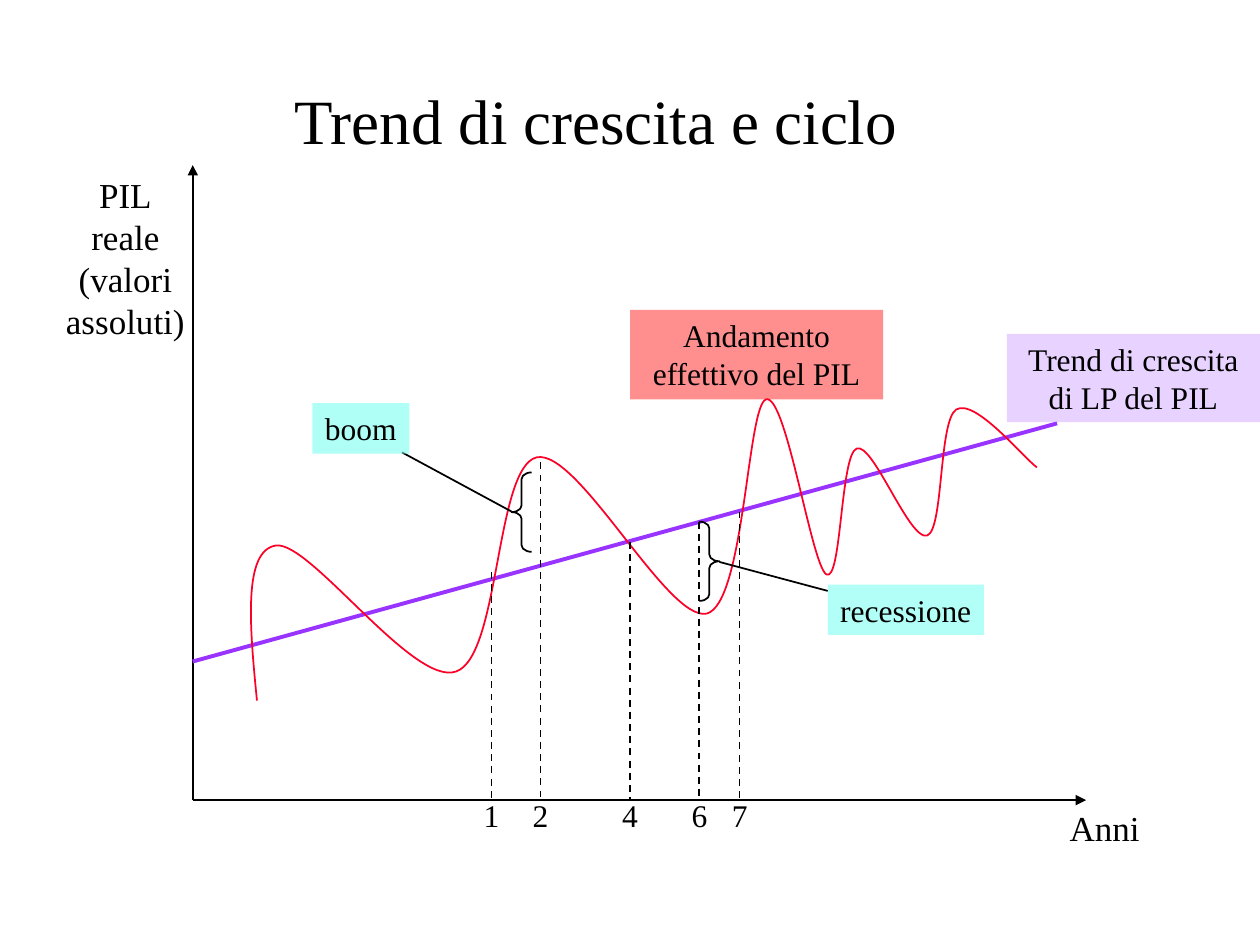
import pptx
import pptx.util
import pptx.dml.color
import pptx.enum.dml
import pptx.enum.shapes
import pptx.enum.text
import pptx.oxml
import pptx.oxml.ns

Inches = pptx.util.Inches
SHAPE = pptx.enum.shapes.MSO_SHAPE
ALIGN = pptx.enum.text.PP_ALIGN
qn = pptx.oxml.ns.qn
COLORS = {"ink": "000000", "trend": "9933FF", "trend_box": "CC99FF",
          "cycle": "FC0128", "cycle_box": "FF0000", "phase_box": "7CFFF2"}


def add_xml(parent, tag, **attrs):
    child = parent.makeelement(qn(tag), attrs)
    parent.append(child)
    return child


class Diagram:
    font = "Times New Roman"

    def __init__(self, slide):
        self.s = slide

    def color(self, name):
        return pptx.dml.color.RGBColor.from_string(COLORS[name])

    def stroke(self, line, color="ink", width=1):
        line.color.rgb = self.color(color)
        line.width = pptx.util.Pt(width)

    def fill_text(self, sp, lines, size, center=False, wrap=False):
        tf = sp.text_frame
        frame = {"word_wrap": wrap,
                 "vertical_anchor": pptx.enum.text.MSO_ANCHOR.TOP,
                 "auto_size": pptx.enum.text.MSO_AUTO_SIZE.SHAPE_TO_FIT_TEXT}
        for key, value in frame.items():
            setattr(tf, key, value)
        for i, line in enumerate(lines):
            p = tf.add_paragraph() if i else tf.paragraphs[0]
            p.alignment = ALIGN.CENTER if center else ALIGN.LEFT
            r = p.add_run()
            r.text = line
            for key, value in {"name": self.font, "size": pptx.util.Pt(size)}.items():
                setattr(r.font, key, value)
            r.font.color.rgb = self.color("ink")

    def text(self, box, lines, size, **style):
        sp = self.s.shapes.add_textbox(*map(Inches, box))
        self.fill_text(sp, lines, size, **style)

    def label(self, box, lines, fill, alpha, **style):
        sp = self.s.shapes.add_shape(SHAPE.RECTANGLE, *map(Inches, box))
        sp.shadow.inherit = False
        sp.fill.solid()
        sp.fill.fore_color.rgb = self.color(fill)
        rgb = sp._element.spPr.find(qn("a:solidFill"))[0]
        add_xml(rgb, "a:alpha", val=str(alpha * 1000))
        sp.line.fill.background()
        self.fill_text(sp, lines, 18, **style)

    def line(self, start, end, color="ink", width=1, dash=False, arrow=False):
        sp = self.s.shapes.add_connector(
            pptx.enum.shapes.MSO_CONNECTOR.STRAIGHT, *map(Inches, (*start, *end)))
        self.stroke(sp.line, color, width)
        if dash:
            sp.line.dash_style = pptx.enum.dml.MSO_LINE.DASH
        if arrow:
            add_xml(sp._element.spPr.find(qn("a:ln")), "a:tailEnd", type="triangle")
        add_xml(sp._element.spPr, "a:effectLst")

    def brace(self, kind, left, top, bend):
        sp = self.s.shapes.add_shape(kind, *map(Inches, (left, top, 0.16, 0.63)))
        sp.adjustments[0] = bend
        sp.adjustments[1] = 0.5
        sp.shadow.inherit = False
        sp.fill.background()
        self.stroke(sp.line)

    def curve(self, points, color):
        start, *rest = [tuple(map(Inches, pt)) for pt in points]
        builder = self.s.shapes.build_freeform(*start)
        builder.add_line_segments(rest, close=False)
        sp = builder.convert_to_shape()
        outline = next(sp._element.iter(qn("a:path")))
        segments = outline.findall(qn("a:lnTo"))
        for i in range(0, len(segments), 3):
            bezier = add_xml(outline, "a:cubicBezTo")
            for segment in segments[i:i + 3]:
                bezier.append(segment[0])
                outline.remove(segment)
        sp.shadow.inherit = False
        sp.fill.background()
        self.stroke(sp.line, color)


def main():
    prs = pptx.Presentation()
    prs.slide_width, prs.slide_height = Inches(10), Inches(7.5)
    d = Diagram(prs.slides.add_slide(prs.slide_layouts[6]))

    axis_x, axis_y = 1.53, 6.35
    d.line((axis_x, axis_y), (axis_x, 1.31), arrow=True)
    d.line((axis_x, axis_y), (8.62, axis_y), arrow=True)
    d.line((axis_x, 5.25), (8.39, 3.36), "trend", 2.25)
    d.label((7.99, 2.65, 2.01, 0.7), ["Trend di crescita", "di LP del PIL"],
            "trend_box", 44, center=True, wrap=True)
    d.text((0.42, 1.33, 1.15, 1.45), ["PIL", "reale", "(valori", "assoluti)"],
           20, center=True)
    d.text((8.39, axis_y, 0.76, 0.44), ["Anni"], 20)

    d.curve([(2.04, 5.56),
             (1.98, 4.96), (1.93, 4.37), (2.19, 4.33),
             (2.46, 4.29), (3.28, 5.45), (3.62, 5.33),
             (3.97, 5.21), (3.93, 3.71), (4.26, 3.63),
             (4.59, 3.56), (5.3, 4.94), (5.61, 4.87),
             (5.91, 4.79), (5.93, 3.22), (6.08, 3.17),
             (6.24, 3.12), (6.44, 4.49), (6.56, 4.56),
             (6.68, 4.62), (6.67, 3.61), (6.8, 3.56),
             (6.93, 3.51), (7.22, 4.3), (7.36, 4.25),
             (7.49, 4.2), (7.45, 3.34), (7.59, 3.25),
             (7.74, 3.16), (8.12, 3.63), (8.23, 3.71)], "cycle")
    d.text((2.24, 0.6, 5.01, 0.7), ["Trend di crescita e ciclo"], 36)

    d.brace(SHAPE.LEFT_BRACE, 4.06, 3.75, 0.332)
    d.line((4.06, 4.06), (3.19, 3.59))
    d.brace(SHAPE.RIGHT_BRACE, 5.55, 4.14, 0.336)
    d.line((5.71, 4.46), (6.57, 4.69))
    d.label((6.57, 4.64, 1.24, 0.4), ["recessione"], "phase_box", 58)
    d.label((2.48, 3.2, 0.77, 0.4), ["boom"], "phase_box", 60)

    years = [("1", 3.9, 4.54), ("2", 4.29, 3.67), ("4", 5, 4.3),
             ("6", 5.55, 4.14), ("7", 5.87, 4.06)]
    for year, x, top in years:
        d.line((x, top), (x, axis_y), dash=True)
        d.text((x - 0.16, 6.27, 0.33, 0.4), [year], 18)

    d.label((5, 2.46, 2.01, 0.71), ["Andamento effettivo del PIL"],
            "cycle_box", 44, center=True, wrap=True)
    prs.save("out.pptx")


if __name__ == "__main__":
    main()
